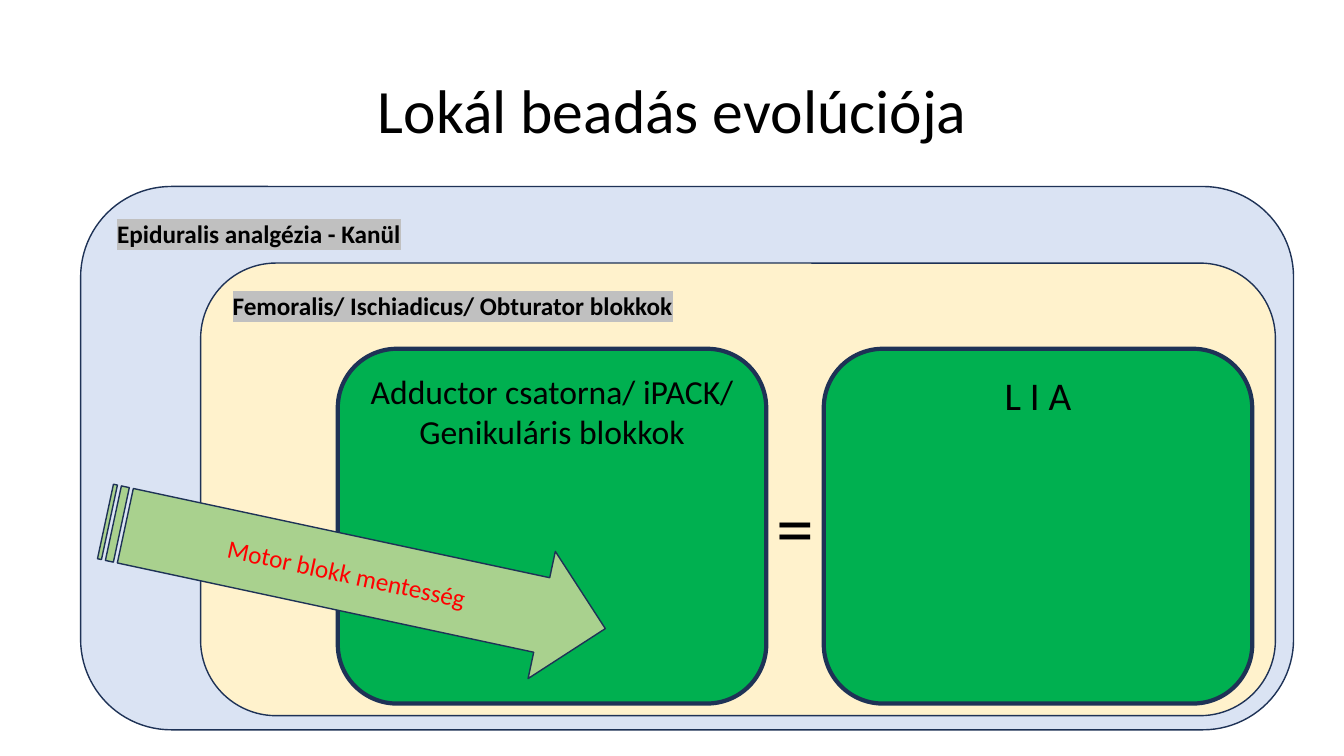
import pptx
import pptx.util
import pptx.dml.color
import pptx.oxml
import pptx.oxml.ns
import pptx.enum.shapes
import pptx.enum.text
from pptx.util import Inches

SHAPE = pptx.enum.shapes.MSO_SHAPE
ALIGN = pptx.enum.text.PP_ALIGN
ANCHOR = pptx.enum.text.MSO_ANCHOR
OUTLINE = "1E3256"


def color(value):
    return pptx.dml.color.RGBColor.from_string(value)


def set_text(sp, text, size, c="000000", bold=False, align=ALIGN.CENTER,
             anchor=ANCHOR.TOP, highlight=None):
    tf = sp.text_frame
    tf.text = text
    tf.vertical_anchor = anchor
    p = tf.paragraphs[0]
    p.alignment = align
    r = p.runs[0]
    r.font.size = pptx.util.Pt(size)
    r.font.name = "Calibri"
    r.font.bold = bold
    r.font.color.rgb = color(c)
    if highlight:
        ns = pptx.oxml.ns.nsdecls("a")
        mark = pptx.oxml.parse_xml(
            f'<a:highlight {ns}><a:srgbClr val="{highlight}"/></a:highlight>')
        r.font._element.find(pptx.oxml.ns.qn("a:solidFill")).addnext(mark)
    return p


def add_panel(s, kind, box, fill, line=1):
    sp = s.shapes.add_shape(kind, *map(Inches, box))
    sp.shadow.inherit = False
    sp.fill.solid()
    sp.fill.fore_color.rgb = color(fill)
    sp.line.color.rgb = color(OUTLINE)
    sp.line.width = pptx.util.Pt(line)
    sp.text_frame.word_wrap = True
    return sp


def add_title(s, box, text):
    sp = s.shapes.title
    sp.left, sp.top, sp.width, sp.height = map(Inches, box)
    p = set_text(sp, text, 44, anchor=ANCHOR.MIDDLE)
    p.line_spacing = 0.9


def add_nested_blocks(s, box):
    x, y, w, h = box
    # Outer and inner frames with highlighted headings
    frames = [
        (box, "DAE3F3", "Epiduralis analgézia - Kanül"),
        ((x + 1.19, y + 0.76, w - 1.37, h - 0.9), "FFF2CC",
         "Femoralis/ Ischiadicus/ Obturator blokkok"),
    ]
    for frame, fill, text in frames:
        sp = add_panel(s, SHAPE.ROUNDED_RECTANGLE, frame, fill)
        set_text(sp, text, 18, bold=True, align=ALIGN.LEFT, highlight="C0C0C0")

    # Two equivalent techniques
    block_w, gap = 4.25, 0.57
    block_x, block_y = x + 2.55, y + 1.61
    blocks = [("Adductor csatorna/ iPACK/ Genikuláris blokkok", 24), ("L I A", 28)]
    for i, (text, size) in enumerate(blocks):
        sp = add_panel(s, SHAPE.ROUNDED_RECTANGLE,
                       (block_x + i * (block_w + gap), block_y, block_w, 3.52),
                       "00B050", 3)
        set_text(sp, text, size)

    # Tilted arrow
    sp = add_panel(s, SHAPE.STRIPED_RIGHT_ARROW,
                   (x + 0.19, y + 3.21, 5.07, 1.29), "A9D18E")
    sp.adjustments[0] = 0.586
    sp.adjustments[1] = 0.5
    sp.rotation = 12.1
    set_text(sp, "Motor blokk mentesség", 18, "FF0000", anchor=ANCHOR.MIDDLE)

    # Equals sign in the gap
    sp = s.shapes.add_textbox(Inches(block_x + block_w), Inches(y + 2.86),
                              Inches(gap), Inches(1.01))
    sp.text_frame.word_wrap = False
    sp.text_frame.auto_size = pptx.enum.text.MSO_AUTO_SIZE.SHAPE_TO_FIT_TEXT
    set_text(sp, "=", 54, align=ALIGN.LEFT)


def main():
    prs = pptx.Presentation()
    prs.slide_width, prs.slide_height = Inches(13.33), Inches(7.5)
    s = prs.slides.add_slide(prs.slide_layouts[5])
    add_title(s, (0.92, 0.4, 11.5, 1.45), "Lokál beadás evolúciója")
    add_nested_blocks(s, (0.8, 1.85, 12.03, 5.39))
    prs.save("out.pptx")


if __name__ == "__main__":
    main()
